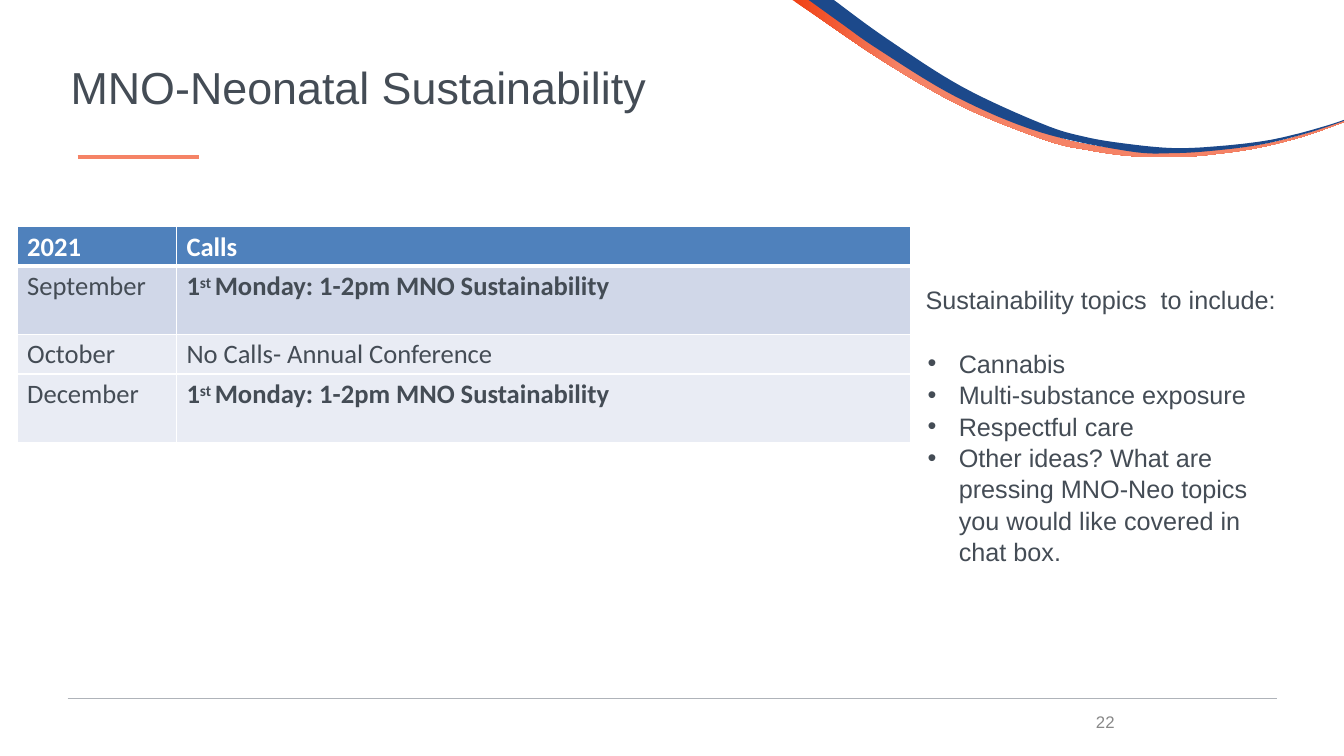
from lxml import etree
from pptx import Presentation
from pptx.dml.color import RGBColor
from pptx.enum.shapes import MSO_CONNECTOR
from pptx.enum.text import MSO_ANCHOR
from pptx.oxml import parse_xml
from pptx.oxml.ns import nsdecls, qn
from pptx.util import Inches, Pt

WHITE, SLATE, NAVY, CORAL = "FFFFFF", "444C55", "1C498B", "F58366"
MONDAY_CALL = [("1", False), ("st ", True), ("Monday: 1-2pm MNO Sustainability", False)]
CALLS = [  # month, runs of (text, superscript), bold, fill, row height
    ("September", MONDAY_CALL, True, "D0D7E8", 0.68),
    ("October", [("No Calls- Annual Conference", False)], False, "E9ECF4", 0.39),
    ("December", MONDAY_CALL, True, "E9ECF4", 0.68),
]
TOPICS = [
    "Cannabis",
    "Multi-substance exposure",
    "Respectful care",
    "Other ideas? What are pressing MNO-Neo topics you would like covered in chat box.",
]
# Edges of the two ribbons, each running left to right
CORAL_TOP = [(8.05, 0), (8.82, 0.54), (9.58, 0.99), (10.39, 1.33), (10.81, 1.44), (11.25, 1.5),
             (11.68, 1.52), (12.12, 1.49), (12.56, 1.43), (12.99, 1.32), (13.33, 1.2)]
CORAL_BOTTOM = [(7.86, 0), (8.04, 0.12), (8.78, 0.62), (9.55, 1.06), (10.37, 1.39), (10.8, 1.49),
                (11.24, 1.55), (11.69, 1.56), (12.13, 1.52), (12.51, 1.46), (12.94, 1.35), (13.33, 1.21)]
NAVY_TOP = [(8.27, 0), (8.79, 0.38), (9.54, 0.86), (10.34, 1.23), (10.77, 1.36), (11.2, 1.43),
            (11.65, 1.47), (12.09, 1.45), (12.53, 1.4), (12.86, 1.33), (13.18, 1.24), (13.33, 1.19)]
NAVY_BOTTOM = [(8.02, 0), (8.34, 0.23), (8.71, 0.49), (9.48, 0.96), (10.31, 1.31), (11.19, 1.5),
               (11.64, 1.52), (12.09, 1.49), (12.53, 1.43), (12.97, 1.32), (13.33, 1.2)]


def color(hex_value):
    return RGBColor.from_string(hex_value)


def smooth_edge(knots, steps=8):
    """Points of a Catmull-Rom curve through the knots."""
    padded = [knots[0], *knots, knots[-1]]
    points = []
    for a, b, c, d in zip(padded, padded[1:], padded[2:], padded[3:]):
        for step in range(steps):
            t = step / steps
            points.append(tuple(
                (2 * q + (r - p) * t + (2 * p - 5 * q + 4 * r - s) * t ** 2
                 + (3 * q - p - 3 * r + s) * t ** 3) / 2
                for p, q, r, s in zip(a, b, c, d)))
    return points + [knots[-1]]


def add_ribbon(slide, top_edge, bottom_edge):
    outline = smooth_edge(top_edge) + smooth_edge(bottom_edge)[::-1]
    points = [(Inches(x), Inches(y)) for x, y in outline]
    builder = slide.shapes.build_freeform(*points[0])
    builder.add_line_segments(points[1:], close=True)
    ribbon = builder.convert_to_shape()
    ribbon.shadow.inherit = False
    ribbon.line.fill.background()
    return ribbon


def add_swoosh(slide):
    fill = add_ribbon(slide, CORAL_TOP, CORAL_BOTTOM).fill
    fill.gradient()
    fill.gradient_angle = 0
    for stop, position, hex_value in zip(fill.gradient_stops, (0, 0.2), ("F04115", CORAL)):
        stop.position = position
        stop.color.rgb = color(hex_value)

    fill = add_ribbon(slide, NAVY_TOP, NAVY_BOTTOM).fill
    fill.solid()
    fill.fore_color.rgb = color(NAVY)


def add_rule(slide, left, top, width, hex_value, weight):
    rule = slide.shapes.add_connector(
        MSO_CONNECTOR.STRAIGHT, Inches(left), Inches(top), Inches(left + width), Inches(top))
    rule.line.color.rgb = color(hex_value)
    rule.line.width = Pt(weight)
    etree.SubElement(rule._element.spPr, qn("a:effectLst"))


def add_run(paragraph, text, size, hex_value, name="Arial", bold=False):
    run = paragraph.add_run()
    run.text = text
    run.font.size, run.font.name, run.font.bold = Pt(size), name, bold
    run.font.color.rgb = color(hex_value)
    return run


def add_text_frame(slide, left, top, width, height):
    box = slide.shapes.add_textbox(Inches(left), Inches(top), Inches(width), Inches(height))
    frame = box.text_frame
    frame.word_wrap = True
    frame.margin_left = frame.margin_right = frame.margin_bottom = 0
    frame.margin_top = Inches(0.01)
    return frame


def add_title(slide, left, top, width, height):
    frame = add_text_frame(slide, left, top, width, height)
    frame.vertical_anchor = MSO_ANCHOR.MIDDLE
    add_run(frame.paragraphs[0], "MNO-Neonatal Sustainability", 32, SLATE)


def style_cell(cell, fill, top_weight, bottom_weight):
    cell.margin_left, cell.margin_top = Inches(0.1), Inches(0.04)
    cell.margin_right = cell.margin_bottom = 0
    properties = cell._tc.get_or_add_tcPr()
    for side, weight in (("L", 1), ("R", 1), ("T", top_weight), ("B", bottom_weight)):
        properties.append(parse_xml(
            f'<a:ln{side} {nsdecls("a")} w="{Pt(weight)}"><a:solidFill>'
            f'<a:srgbClr val="{WHITE}"/></a:solidFill></a:ln{side}>'))
    cell.fill.solid()
    cell.fill.fore_color.rgb = color(fill)


def add_calls_table(slide, left, top, column_widths):
    header = ("2021", [("Calls", False)], True, "4F81BC", 0.39)
    rows = [header, *CALLS]
    table = slide.shapes.add_table(
        len(rows), 2, Inches(left), Inches(top), Inches(sum(column_widths)),
        Inches(sum(row[-1] for row in rows))).table
    for column, width in zip(table.columns, column_widths):
        column.width = Inches(width)
    for index, (month, call, bold, fill, height) in enumerate(rows):
        table.rows[index].height = Inches(height)
        is_header = index == 0
        text_color = WHITE if is_header else SLATE
        contents = (([(month, False)], is_header), (call, bold))
        for cell, (runs, is_bold) in zip(table.rows[index].cells, contents):
            style_cell(cell, fill, 3 if index == 1 else 1, 3 if is_header else 1)
            for text, superscript in runs:
                run = add_run(cell.text_frame.paragraphs[0], text, 19, text_color, "Calibri", is_bold)
                if superscript:
                    run._r.get_or_add_rPr().set("baseline", "26000")


def add_topics(slide, left, top, width, height):
    frame = add_text_frame(slide, left, top, width, height)
    heading = frame.paragraphs[0]
    heading.line_spacing = 1.04
    add_run(heading, "Sustainability topics  to include:", 18, SLATE)
    for index, topic in enumerate(TOPICS):
        paragraph = frame.add_paragraph()
        paragraph.line_spacing = 1.04
        paragraph.space_before = Pt(0 if index else 23)
        properties = paragraph._p.get_or_add_pPr()
        properties.set("marL", str(Inches(0.33)))
        properties.set("indent", str(Inches(-0.31)))
        etree.SubElement(properties, qn("a:buFont")).set("typeface", "Arial")
        etree.SubElement(properties, qn("a:buChar")).set("char", "•")
        add_run(paragraph, topic, 18, SLATE)


def add_page_number(slide, left, top, width, height):
    frame = add_text_frame(slide, left, top, width, height)
    add_run(frame.paragraphs[0], "22", 12, "888888")


def main():
    presentation = Presentation()
    presentation.slide_width, presentation.slide_height = Inches(13.33), Inches(7.5)
    slide = presentation.slides.add_slide(presentation.slide_layouts[6])
    add_swoosh(slide)
    add_rule(slide, 0.67, 6.93, 12, "AFB3B9", 0.5)
    add_rule(slide, 0.77, 1.56, 1.2, CORAL, 2.5)
    add_title(slide, 0.7, 0.58, 6.54, 0.55)
    add_calls_table(slide, 0.17, 2.25, (1.58, 7.28))
    add_page_number(slide, 10.87, 7.05, 0.21, 0.22)
    add_topics(slide, 9.18, 2.8, 3.5, 2.75)
    presentation.save("out.pptx")


if __name__ == "__main__":
    main()
